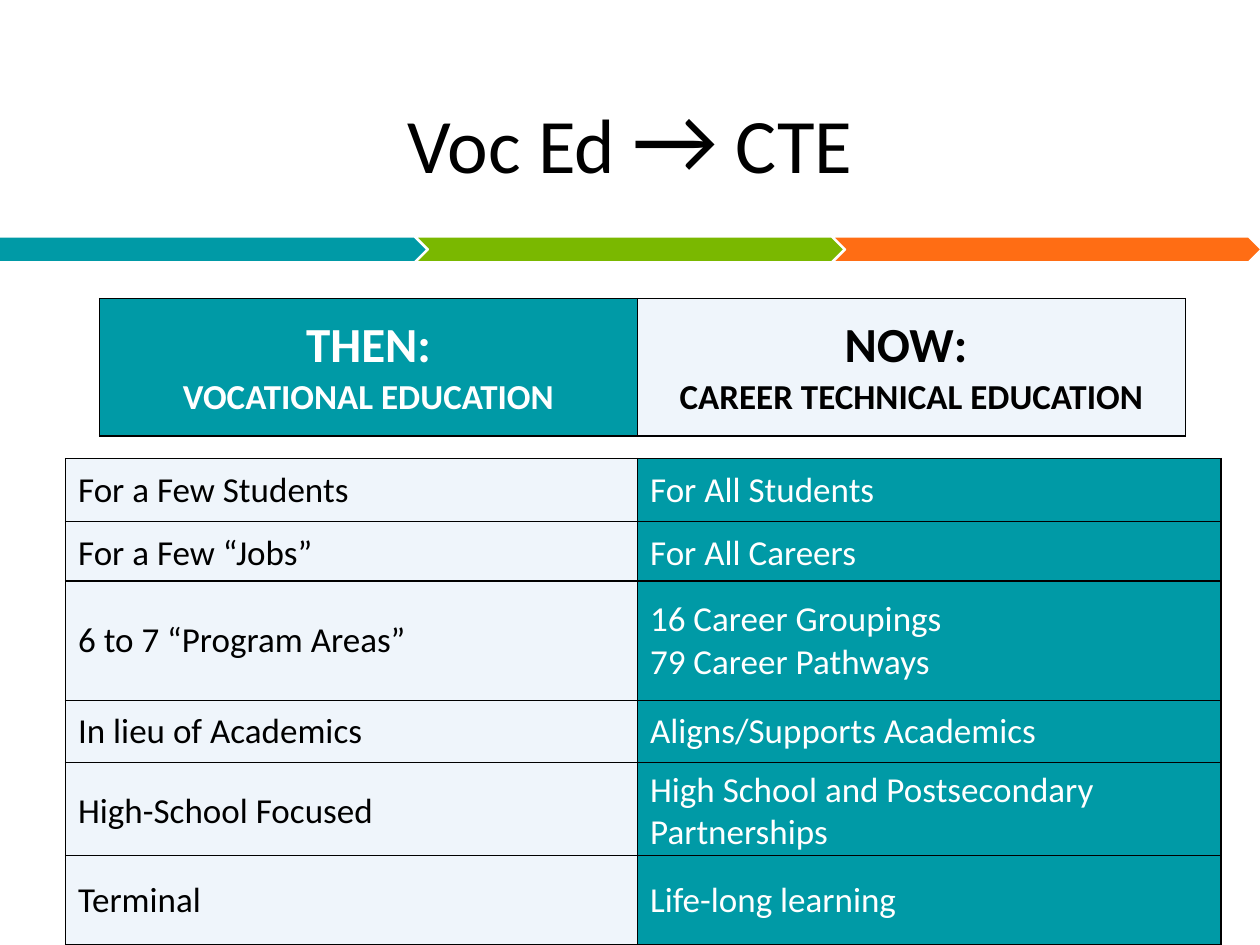
import pptx
import pptx.util
import pptx.dml.color
import pptx.enum.shapes
import pptx.enum.text
import pptx.oxml
import pptx.oxml.ns
from lxml import etree

Inches = pptx.util.Inches
Pt = pptx.util.Pt
RGBColor = pptx.dml.color.RGBColor
MSO_SHAPE = pptx.enum.shapes.MSO_SHAPE
MIDDLE = pptx.enum.text.MSO_ANCHOR.MIDDLE
CENTER = pptx.enum.text.PP_ALIGN.CENTER
LEFT = pptx.enum.text.PP_ALIGN.LEFT
qn = pptx.oxml.ns.qn

TEAL = RGBColor(0x00, 0x9A, 0xA6)
GREEN = RGBColor(0x7A, 0xB8, 0x00)
ORANGE = RGBColor(0xFF, 0x6D, 0x14)
PALE = RGBColor(0xEF, 0xF5, 0xFB)
WHITE = RGBColor(0xFF, 0xFF, 0xFF)
BLACK = RGBColor(0x00, 0x00, 0x00)
FONT = "Calibri"

COMPARISONS = [
    (3.64, 0.51, ["For a Few Students"], ["For All Students"]),
    (4.14, 0.51, ["For a Few “Jobs”"], ["For All Careers"]),
    (4.61, 0.95, ["6 to 7 “Program Areas”"], ["16 Career Groupings", "79 Career Pathways"]),
    (5.56, 0.49, ["In lieu of Academics"], ["Aligns/Supports Academics"]),
    (6.05, 0.78, ["High-School Focused"], ["High School and Postsecondary Partnerships"]),
    (6.79, 0.71, ["Terminal"], ["Life-long learning"]),
]


def add_run(p, text, size, color, bold=False):
    r = p.add_run()
    r.text = text
    r.font.name = FONT
    r.font.size = Pt(size)
    r.font.bold = bold
    r.font.color.rgb = color


def add_title(slide, left, top, width, height):
    box = slide.shapes.add_textbox(Inches(left), Inches(top), Inches(width), Inches(height))
    tf = box.text_frame
    tf.word_wrap = True
    tf.vertical_anchor = MIDDLE
    p = tf.paragraphs[0]
    p.alignment = CENTER
    for text, size in (("Voc Ed ", 44), ("→", 54), (" CTE", 44)):
        add_run(p, text, size, BLACK)


def add_arrow_band(slide, left, top, width, height):
    overlap = 0.09
    length = (width + 2 * overlap) / 3
    arrows = [(MSO_SHAPE.PENTAGON, TEAL), (MSO_SHAPE.CHEVRON, GREEN), (MSO_SHAPE.CHEVRON, ORANGE)]
    for i, (kind, color) in enumerate(arrows):
        sp = slide.shapes.add_shape(kind, Inches(left + i * (length - overlap)), Inches(top),
                                    Inches(length), Inches(height))
        sp.shadow.inherit = False
        sp.fill.solid()
        sp.fill.fore_color.rgb = color
        sp.line.color.rgb = WHITE
        sp.line.width = Pt(1)


def add_borders(cell):
    tc_pr = cell._tc.get_or_add_tcPr()
    for i, side in enumerate(("lnL", "lnR", "lnT", "lnB")):
        ln = etree.Element(qn("a:" + side), w=str(Pt(1)))
        fill = etree.SubElement(ln, qn("a:solidFill"))
        etree.SubElement(fill, qn("a:srgbClr"), val=str(BLACK))
        tc_pr.insert(i, ln)


def fill_cell(cell, lines, sizes, fill, color, alignment, bold):
    cell.fill.solid()
    cell.fill.fore_color.rgb = fill
    cell.vertical_anchor = MIDDLE
    add_borders(cell)
    tf = cell.text_frame
    for i, (line, size) in enumerate(zip(lines, sizes)):
        p = tf.add_paragraph() if i else tf.paragraphs[0]
        p.alignment = alignment
        add_run(p, line, size, color, bold)


def add_pair(slide, left, top, widths, height, pair, sizes, styles, alignment=LEFT, bold=False):
    frame = slide.shapes.add_table(1, 2, Inches(left), Inches(top),
                                   Inches(sum(widths)), Inches(height))
    table = frame.table
    table.first_row = False
    table.horz_banding = False
    table.rows[0].height = Inches(height)
    for i, (lines, (fill, color)) in enumerate(zip(pair, styles)):
        table.columns[i].width = Inches(widths[i])
        fill_cell(table.cell(0, i), lines, sizes, fill, color, alignment, bold)


def add_comparison(slide, left):
    dark, light = (TEAL, WHITE), (PALE, BLACK)
    headings = (["THEN:", "VOCATIONAL EDUCATION"], ["NOW: ", "CAREER TECHNICAL EDUCATION"])
    add_pair(slide, left + 0.27, 2.37, (4.27, 4.35), 1.09, headings, (28, 20),
             (dark, light), CENTER, True)
    for top, height, then, now in COMPARISONS:
        add_pair(slide, left, top, (4.54, 4.63), height, (then, now), (20, 20), (light, dark))


def main():
    prs = pptx.Presentation()
    prs.slide_width = Inches(10)
    prs.slide_height = Inches(7.5)
    s = prs.slides.add_slide(prs.slide_layouts[6])
    add_arrow_band(s, -0.01, 1.88, 10.02, 0.2)
    add_comparison(s, 0.52)
    add_title(s, 0.69, 0.35, 8.62, 1.45)
    prs.save("out.pptx")


if __name__ == "__main__":
    main()
